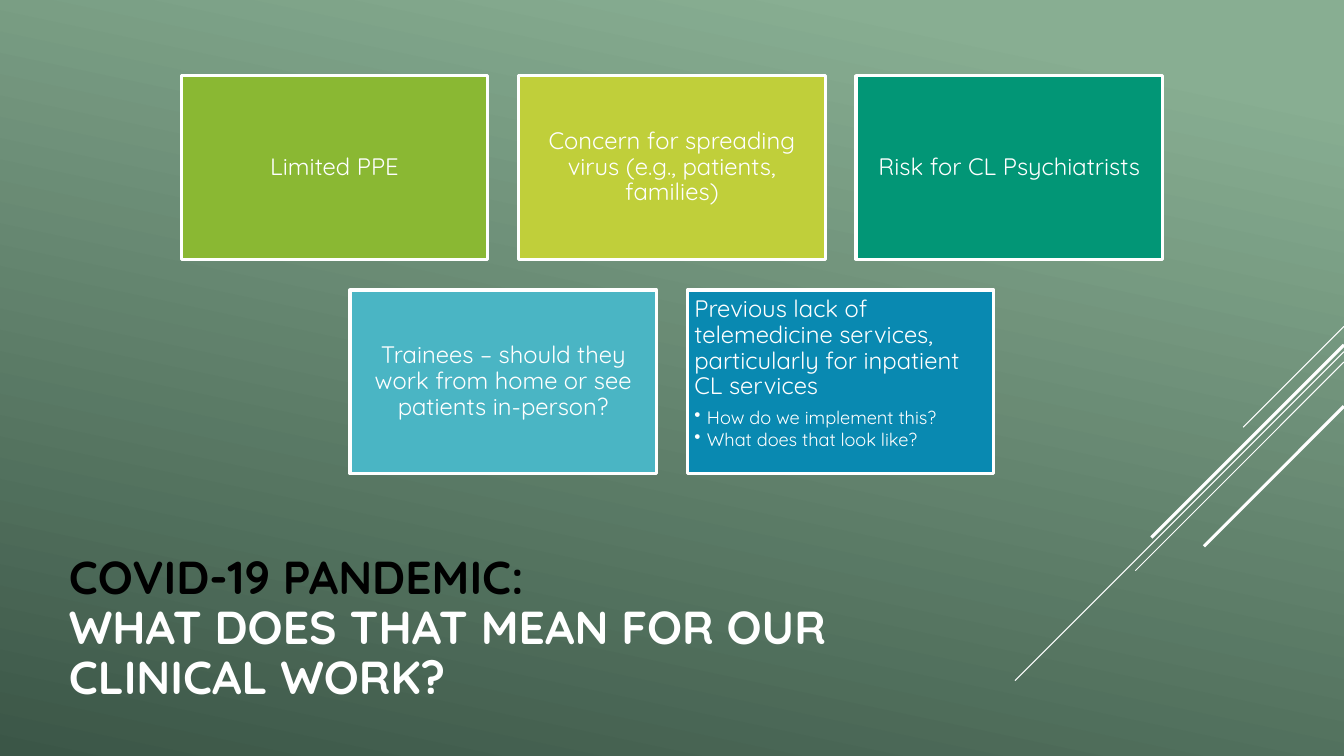
import pptx
import pptx.util
import pptx.dml.color
import pptx.enum.shapes
import pptx.enum.text
import pptx.oxml.ns
import lxml.etree

Pt = pptx.util.Pt
ALIGN = pptx.enum.text.PP_ALIGN
ANCHOR = pptx.enum.text.MSO_ANCHOR
qn = pptx.oxml.ns.qn

# Content
WIDE, HIGH = 960, 540
FONT = "Quicksand"
TITLE = [("COVID-19 PANDEMIC: ", "000000"),
         ("WHAT DOES THAT MEAN FOR OUR CLINICAL WORK?", "FFFFFF")]
ROWS = [
    [("Limited PPE", "8AB833", []),
     ("Concern for spreading virus (e.g., patients, families)", "C0CF3A", []),
     ("Risk for CL Psychiatrists", "029676", [])],
    [("Trainees – should they work from home or see patients in-person?",
      "4AB5C4", []),
     ("Previous lack of telemedicine services, particularly for inpatient "
      "CL services", "0989B1",
      ["How do we implement this?", "What does that look like?"])],
]
# Diagonal lines: height at the right edge, run to the lower left, weight
RAYS = [(233.2, 72, 0.75), (251.2, 235, 0.75), (258.6, 149, 0.75),
        (246.4, 137.5, 2.25), (290.2, 100, 2.25)]
BACK = [(0.1, "88AE92"), (1, "3B5647")]

# Card grid
CARD_W, CARD_H, GAP, TOP = 219, 131.2, 22, 54


def color(code):
    return pptx.dml.color.RGBColor.from_string(code)


def write(para, text, size=17, code="FFFFFF", bold=False,
          align=ALIGN.LEFT, after=0, bullet=False):
    para.alignment = align
    para.line_spacing = 0.9
    para.space_before = Pt(0)
    para.space_after = Pt(after)
    if bullet:
        props = para._p.get_or_add_pPr()
        props.set("marL", str(Pt(9)))
        props.set("indent", str(-Pt(9)))
        lxml.etree.SubElement(props, qn("a:buChar")).set("char", "•")
    run = para.add_run()
    run.text = text
    run.font.name = FONT
    run.font.size = Pt(size)
    run.font.bold = bold
    run.font.color.rgb = color(code)


def card(slide, left, top, text, fill, points):
    box = slide.shapes.add_shape(pptx.enum.shapes.MSO_SHAPE.RECTANGLE,
                                 Pt(left), Pt(top), Pt(CARD_W), Pt(CARD_H))
    box.shadow.inherit = False
    box.fill.solid()
    box.fill.fore_color.rgb = color(fill)
    box.line.color.rgb = color("FFFFFF")
    box.line.width = Pt(2.25)
    frame = box.text_frame
    frame.word_wrap = True
    frame.margin_left = frame.margin_right = Pt(5)
    frame.margin_top = frame.margin_bottom = Pt(5)
    frame.vertical_anchor = ANCHOR.TOP if points else ANCHOR.MIDDLE
    write(frame.paragraphs[0], text, after=6 if points else 0,
          align=ALIGN.LEFT if points else ALIGN.CENTER)
    for point in points:
        write(frame.add_paragraph(), point, size=13, after=2, bullet=True)


def main():
    deck = pptx.Presentation()
    deck.slide_width, deck.slide_height = Pt(WIDE), Pt(HIGH)
    slide = deck.slides.add_slide(deck.slide_layouts[5])

    # Background
    fill = slide.background.fill
    fill.gradient()
    fill.gradient_angle = 360 - 102
    for stop, (place, code) in zip(fill.gradient_stops, BACK):
        stop.position = place
        stop.color.rgb = color(code)

    # Diagonal lines, all at 45 degrees
    for top, run, weight in RAYS:
        ray = slide.shapes.add_connector(
            pptx.enum.shapes.MSO_CONNECTOR.STRAIGHT,
            Pt(WIDE), Pt(top), Pt(WIDE - run), Pt(top + run))
        ray.line.color.rgb = color("FFFFFF")
        ray.line.width = Pt(weight)
        lxml.etree.SubElement(ray._element.spPr, qn("a:effectLst"))

    # Title
    title = slide.shapes.title
    title.left, title.top = Pt(42), Pt(390)
    title.width, title.height = Pt(639), Pt(119)
    frame = title.text_frame
    frame.word_wrap = True
    frame.auto_size = pptx.enum.text.MSO_AUTO_SIZE.NONE
    frame.vertical_anchor = ANCHOR.MIDDLE
    para = frame.paragraphs[0]
    for i, (text, code) in enumerate(TITLE):
        if i:
            para.add_line_break()
        write(para, text, size=33, code=code, bold=True)

    # Cards, each row centred on the slide
    for r, row in enumerate(ROWS):
        span = len(row) * (CARD_W + GAP) - GAP
        for c, (text, code, points) in enumerate(row):
            card(slide, (WIDE - span) / 2 + c * (CARD_W + GAP),
                 TOP + r * (CARD_H + GAP), text, code, points)

    deck.save("out.pptx")


if __name__ == "__main__":
    main()
